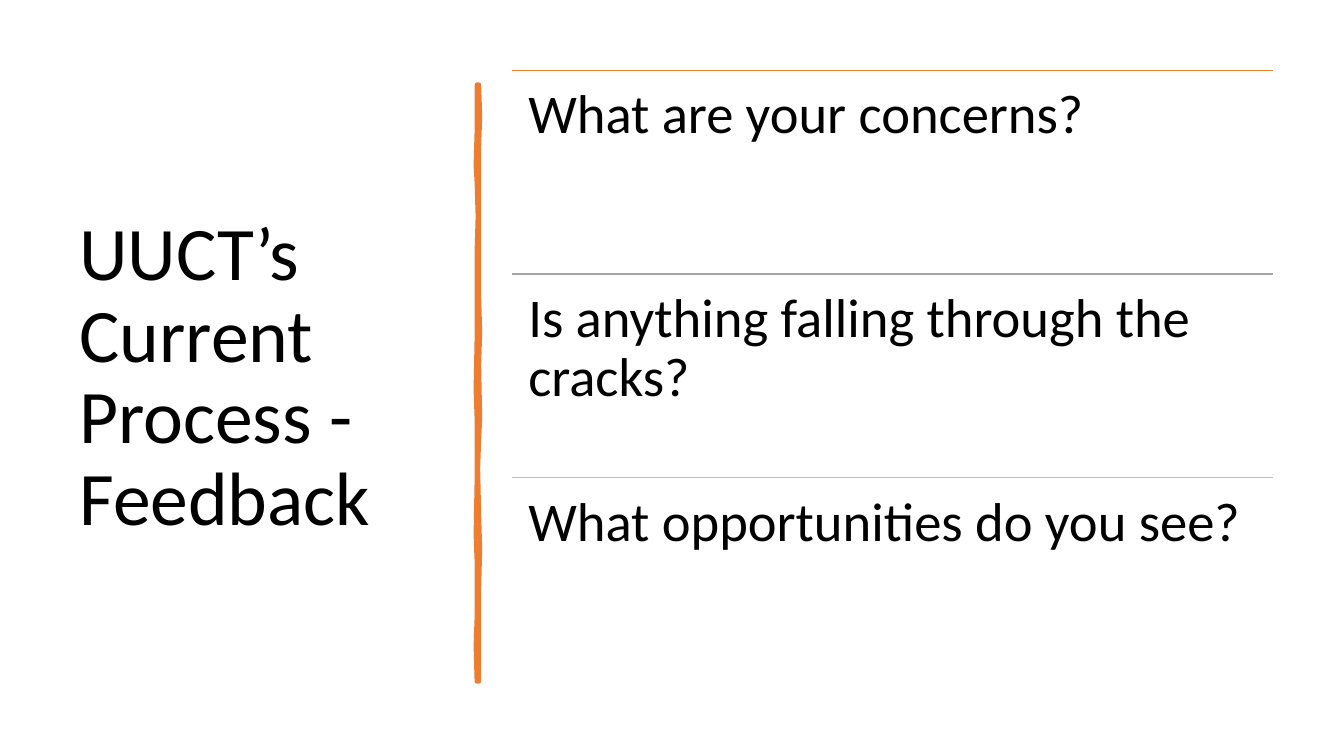
from pptx import Presentation
from pptx.dml.color import RGBColor
from pptx.enum.shapes import MSO_CONNECTOR as CONN
from pptx.enum.text import MSO_ANCHOR as ANCHOR
from pptx.oxml.ns import qn
from pptx.util import Pt
from lxml import etree

PX = 9144
ORANGE = "ED7D31"
QUESTIONS = [
    ("What are your concerns?", ORANGE),
    ("Is anything falling through the cracks?", "A5A5A5"),
    ("What opportunities do you see?", "FFC000"),
]
LEFT, TOP, WIDTH, STEP = 508, 70, 755, 202
STROKE = [
    (475, 84), (476, 115), (475, 146), (475, 226), (475, 294), (476, 330),
    (475, 362), (476, 415), (475, 436), (474, 465), (475, 510), (476, 545),
    (475, 584), (475, 676), (473, 676), (472, 640), (473, 613), (473, 557),
    (472, 530), (473, 477), (473, 415), (472, 386), (473, 335), (473, 250),
    (474, 215), (473, 181), (472, 164), (473, 130), (473, 84),
]


def px(n):
    """Turn px into EMU."""
    return n * PX


def color(value):
    """Turn a hex string into a colour."""
    return RGBColor.from_string(value)


def add_text(s, box, text, size, inset, anchor=ANCHOR.TOP):
    """Add a wrapped text box with one paragraph."""
    tf = s.shapes.add_textbox(*map(px, box)).text_frame
    tf.word_wrap = True
    tf.vertical_anchor = anchor
    tf.margin_left = tf.margin_right = px(inset[0])
    tf.margin_top = tf.margin_bottom = px(inset[1])
    p = tf.paragraphs[0]
    p.text = text
    p.line_spacing = 0.9
    p.font.name = "Calibri"
    p.font.size = Pt(size)
    p.font.color.rgb = color("000000")


def add_rule(s, x, y, width, line_color):
    """Add a thin horizontal line."""
    line = s.shapes.add_connector(CONN.STRAIGHT, px(x), px(y), px(x + width), px(y))
    line.line.color.rgb = color(line_color)
    line.line.width = Pt(1)
    etree.SubElement(line._element.spPr, qn("a:effectLst"))


def add_stroke(s, points, fill):
    """Add the hand-drawn vertical divider."""
    builder = s.shapes.build_freeform(*points[0], scale=PX)
    builder.add_line_segments(points[1:], close=True)
    sp = builder.convert_to_shape()
    sp.shadow.inherit = False
    sp.fill.solid()
    sp.fill.fore_color.rgb = color(fill)
    sp.line.color.rgb = color(fill)
    sp.line.width = Pt(3.25)
    etree.SubElement(sp.line._ln, qn("a:round"))


def main():
    """Build the slide and save it."""
    prs = Presentation()
    prs.slide_width, prs.slide_height = px(1333), px(750)
    s = prs.slides.add_slide(prs.slide_layouts[6])
    add_text(s, (69, 70, 374, 611), "UUCT’s Current Process - Feedback", 54,
             (10, 5), ANCHOR.MIDDLE)
    add_stroke(s, STROKE, ORANGE)
    for i, (question, line_color) in enumerate(QUESTIONS):
        y = TOP + i * STEP
        add_rule(s, LEFT, y, WIDTH, line_color)
        add_text(s, (LEFT, y, WIDTH, STEP), question, 39, (16, 16))
    prs.save("out.pptx")


if __name__ == "__main__":
    main()
